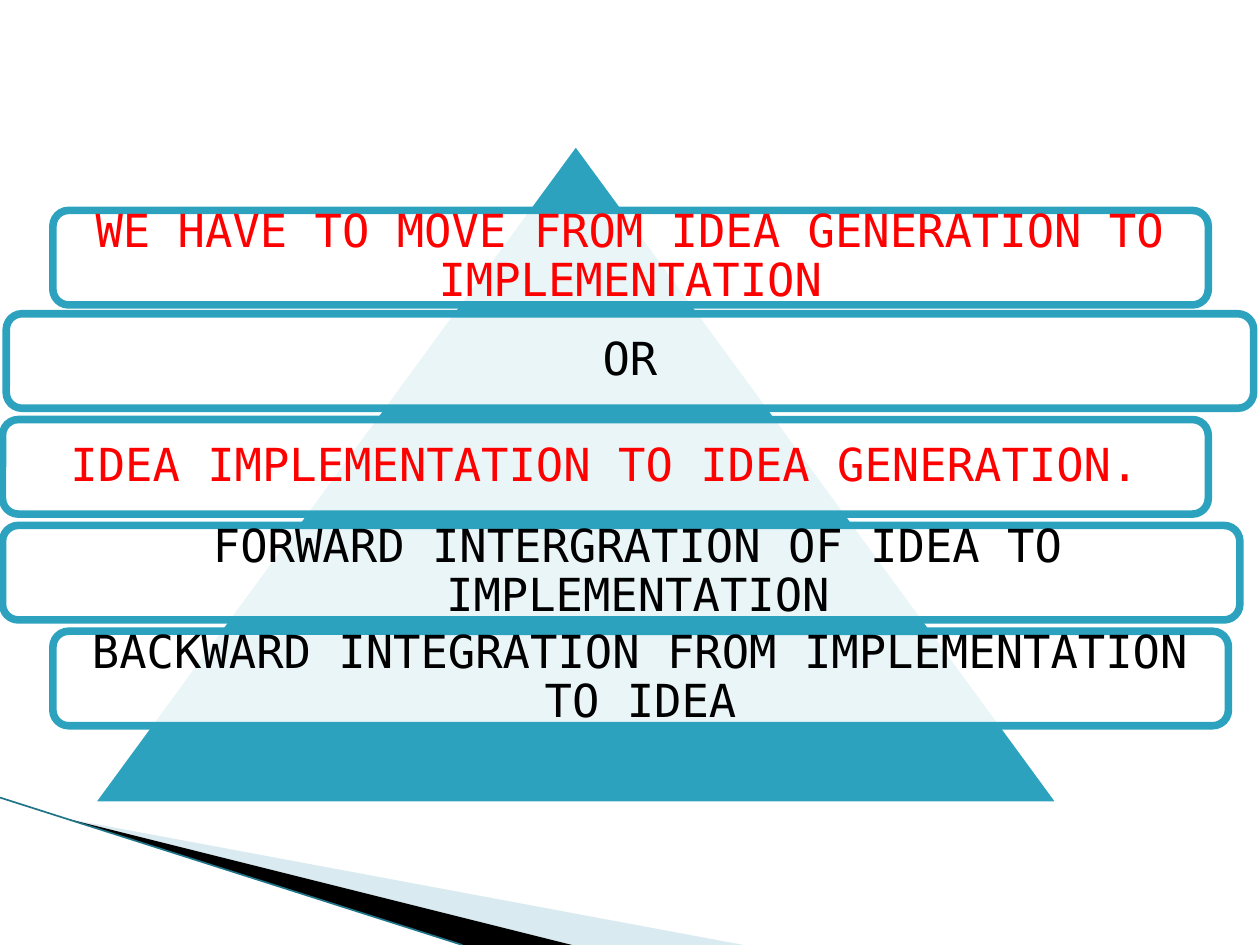
from lxml import etree
from pptx import Presentation
from pptx.dml.color import RGBColor
from pptx.enum.shapes import MSO_CONNECTOR, MSO_SHAPE
from pptx.enum.text import MSO_ANCHOR, PP_ALIGN
from pptx.oxml.ns import qn
from pptx.util import Inches, Pt

TRIANGLE = MSO_SHAPE.ISOSCELES_TRIANGLE
ROUNDED = MSO_SHAPE.ROUNDED_RECTANGLE
STRAIGHT = MSO_CONNECTOR.STRAIGHT
MIDDLE = MSO_ANCHOR.MIDDLE
CENTER = PP_ALIGN.CENTER

WHITE = RGBColor(0xFF, 0xFF, 0xFF)
BLACK = RGBColor(0x00, 0x00, 0x00)
RED = RGBColor(0xFF, 0x00, 0x00)
TEAL = RGBColor(0x2D, 0xA2, 0xBF)
DARK_TEAL = RGBColor(0x1F, 0x74, 0x88)
PALE_BLUE = RGBColor(0xA0, 0xCB, 0xDC)

FONT = "DejaVu Sans Mono"
OUTLINE = Pt(4.33)
BAND_HEIGHT = 0.75
INSET = 0.11

BANDS = [
    (0.42, 1.67, 9.17, INSET, RED,
     "WE HAVE TO MOVE FROM IDEA GENERATION TO IMPLEMENTATION"),
    (0.05, 2.49, 9.9, INSET, BLACK, "OR"),
    (0.02, 3.33, 9.57, INSET, RED, "IDEA IMPLEMENTATION TO IDEA GENERATION."),
    (0.02, 4.17, 9.82, 0.38, BLACK,
     "FORWARD INTERGRATION OF IDEA TO IMPLEMENTATION"),
    (0.42, 5.01, 9.33, INSET, BLACK,
     "BACKWARD INTEGRATION FROM IMPLEMENTATION TO IDEA"),
]


def fill_solid(shape, color, opacity=100):
    shape.shadow.inherit = False
    shape.fill.solid()
    shape.fill.fore_color.rgb = color
    if opacity < 100:
        color_element = shape._element.spPr.find(qn("a:solidFill"))[0]
        etree.SubElement(color_element, qn("a:alpha"), val=str(opacity * 1000))


def add_wedge(slide, points, color, opacity=100):
    corners = [(Inches(x), Inches(y)) for x, y in points]
    builder = slide.shapes.build_freeform(*corners[0])
    builder.add_line_segments(corners[1:])
    wedge = builder.convert_to_shape()
    fill_solid(wedge, color, opacity)
    wedge.line.fill.background()


def add_corner_sweep(slide, left, top, bottom):
    tip = (left + 0.54, top + 0.17)
    add_wedge(slide, [tip, (left + 5.9, bottom), (left + 4.54, bottom)],
              PALE_BLUE, 40)
    add_wedge(slide, [tip, (left + 4.54, bottom), (left + 3.67, bottom)], BLACK)
    edge = slide.shapes.add_connector(
        STRAIGHT, Inches(left), Inches(top), Inches(left + 3.67), Inches(bottom))
    edge.line.color.rgb = DARK_TEAL
    edge.line.width = Pt(0.95)
    etree.SubElement(edge._element.spPr, qn("a:effectLst"))


def add_pyramid(slide, left, top, width, height):
    pyramid = slide.shapes.add_shape(
        TRIANGLE, Inches(left), Inches(top), Inches(width), Inches(height))
    fill_solid(pyramid, TEAL)
    pyramid.line.color.rgb = WHITE
    pyramid.line.width = OUTLINE


def add_band(slide, left, top, width, left_inset, color, statement):
    band = slide.shapes.add_shape(
        ROUNDED, Inches(left), Inches(top), Inches(width), Inches(BAND_HEIGHT))
    fill_solid(band, WHITE, 90)
    band.line.color.rgb = TEAL
    band.line.width = OUTLINE
    frame = band.text_frame
    frame.word_wrap = True
    frame.vertical_anchor = MIDDLE
    frame.margin_left = Inches(left_inset)
    frame.margin_right = frame.margin_top = frame.margin_bottom = Inches(INSET)
    paragraph = frame.paragraphs[0]
    paragraph.text = statement
    paragraph.alignment = CENTER
    paragraph.line_spacing = 0.9
    paragraph.font.name = FONT
    paragraph.font.size = Pt(26)
    paragraph.font.color.rgb = color


def main():
    deck = Presentation()
    deck.slide_width = Inches(10)
    deck.slide_height = Inches(7.5)
    slide = deck.slides.add_slide(deck.slide_layouts[6])
    add_corner_sweep(slide, 0, 6.33, 7.5)
    add_pyramid(slide, 0.71, 1.12, 7.72, 5.27)
    for band in BANDS:
        add_band(slide, *band)
    deck.save("out.pptx")


if __name__ == "__main__":
    main()
